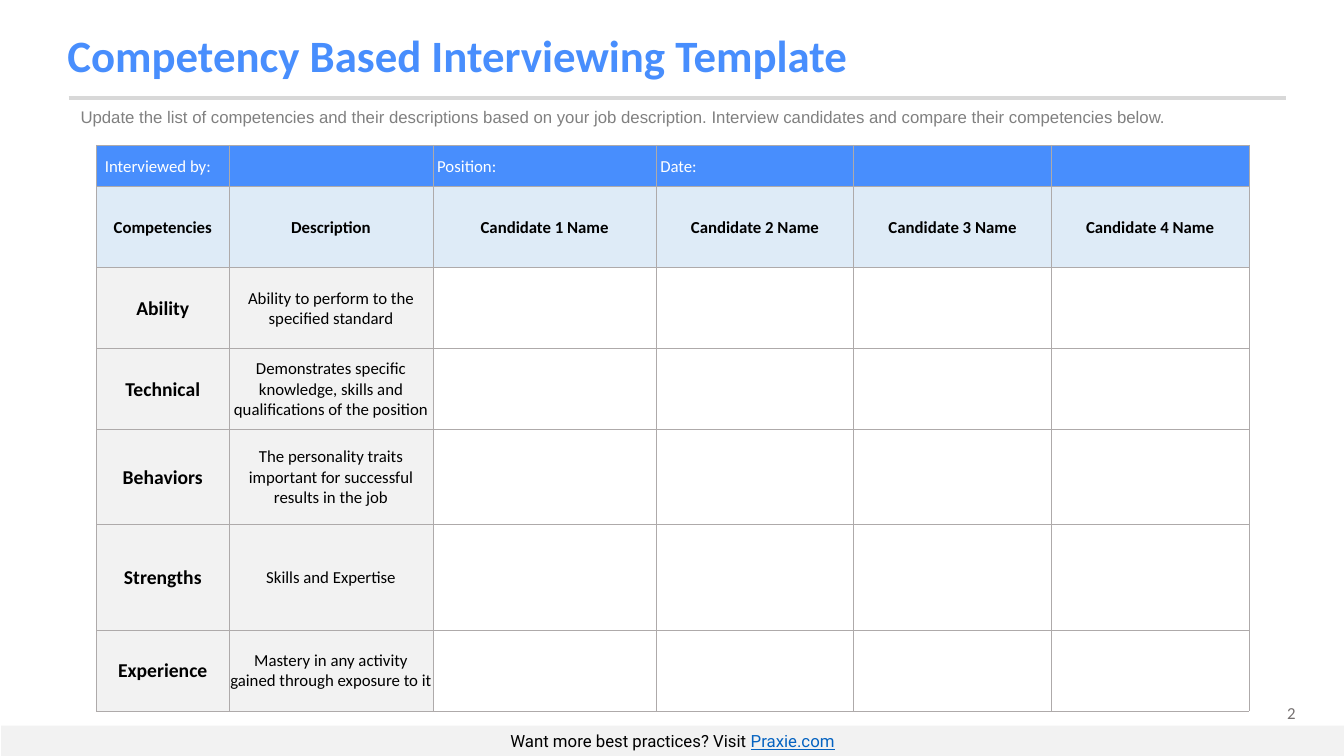
import pptx
import pptx.util
import pptx.dml.color
import pptx.enum.shapes
import pptx.enum.text
import pptx.oxml
import pptx.oxml.ns

COLORS = {
    "blue": "488EFD", "pale blue": "DEEBF7", "pale gray": "F2F2F2",
    "white": "FFFFFF", "black": "000000", "rule": "D8D8D8",
    "border": "AEAAAA", "number": "757070", "hint": "808080", "link": "0563C1",
}
ALIGN = pptx.enum.text.PP_ALIGN
MIDDLE = pptx.enum.text.MSO_ANCHOR.MIDDLE
RGB = pptx.dml.color.RGBColor.from_string

presentation = pptx.Presentation()
presentation.slide_width = pptx.util.Inches(13.33)
presentation.slide_height = pptx.util.Inches(7.5)
slide = presentation.slides.add_slide(presentation.slide_layouts[6])
shapes = slide.shapes


def place(left, top, width, height):
    """Turn percentages of the slide's width and height into lengths."""
    across, down = presentation.slide_width / 100, presentation.slide_height / 100
    return int(left * across), int(top * down), int(width * across), int(height * down)


def write(frame, text, size, color, font="Calibri", bold=False, align=ALIGN.LEFT):
    frame.word_wrap = True
    paragraph = frame.paragraphs[0]
    paragraph.text = text
    paragraph.alignment = align
    run = paragraph.runs[0]
    run.font.name = font
    run.font.size = pptx.util.Pt(size)
    run.font.bold = bold
    run.font.color.rgb = RGB(COLORS[color])
    return paragraph


# Title, rule and hint
title = shapes.add_textbox(*place(4.28, 2.53, 82, 10.27))
title.text_frame.vertical_anchor = MIDDLE
write(title.text_frame, "Competency Based Interviewing Template", 32, "blue",
      bold=True).line_spacing = 0.9

left, top, width, _ = place(5.1, 12.93, 90.62, 0)
rule = shapes.add_connector(pptx.enum.shapes.MSO_CONNECTOR.STRAIGHT,
                            left, top, left + width, top)
rule.line.color.rgb = RGB(COLORS["rule"])
rule.line.width = pptx.util.Pt(3)
rule._element.spPr.append(pptx.oxml.parse_xml(
    f'<a:effectLst {pptx.oxml.ns.nsdecls("a")}/>'))

hint = shapes.add_textbox(*place(5.25, 13.47, 89.5, 4))
write(hint.text_frame,
      "Update the list of competencies and their descriptions based on your job "
      "description. Interview candidates and compare their competencies below.",
      12, "hint", font="Arial")

# Competency table
candidates = [f"Candidate {number} Name" for number in range(1, 5)]
blank = [""] * len(candidates)
rows = [
    ["Interviewed by:", "", "Position:", "Date:", "", ""],
    ["Competencies", "Description"] + candidates,
    ["Ability", "Ability to perform to the specified standard"] + blank,
    ["Technical", "Demonstrates specific knowledge, skills and "
                  "qualifications of the position"] + blank,
    ["Behaviors", "The personality traits important for successful "
                  "results in the job"] + blank,
    ["Strengths", "Skills and Expertise"] + blank,
    ["Experience", "Mastery in any activity gained through exposure to it"] + blank,
]
column_shares = [9.83, 15.2, 16.6, 14.7, 14.7, 14.7]
row_shares = [5.5, 10.72, 10.68, 10.68, 12.6, 13.95, 10.72]

table_frame = shapes.add_table(
    len(rows), len(column_shares),
    *place(7.2, 19.2, sum(column_shares), sum(row_shares)))
table = table_frame.table
table.first_row = table.horz_banding = False
for column, share in zip(table.columns, column_shares):
    column.width = place(0, 0, share, 0)[2]
for row, share in zip(table.rows, row_shares):
    row.height = place(0, 0, 0, share)[3]

for row_index, texts in enumerate(rows):
    for column_index, text in enumerate(texts):
        cell = table.cell(row_index, column_index)
        cell.vertical_anchor = MIDDLE
        size, color, bold, align = 12, "black", False, ALIGN.CENTER
        indent = 0.01
        if row_index == 0:
            fill, color, align = "blue", "white", ALIGN.LEFT
            indent = 0.08 if column_index == 0 else 0.04
        elif row_index == 1:
            fill, bold = "pale blue", True
        elif column_index == 0:
            fill, size, bold = "pale gray", 14, True
        else:
            fill = "pale gray" if column_index == 1 else "white"
        cell.fill.solid()
        cell.fill.fore_color.rgb = RGB(COLORS[fill])
        cell.margin_left = pptx.util.Inches(indent)
        cell.margin_right = cell.margin_top = pptx.util.Inches(0.01)
        cell.margin_bottom = 0
        if text:
            write(cell.text_frame, text, size, color, bold=bold, align=align)
        properties = cell._tc.get_or_add_tcPr()
        for position, side in enumerate("LRTB"):
            properties.insert(position, pptx.oxml.parse_xml(
                f'<a:ln{side} {pptx.oxml.ns.nsdecls("a")} w="6350"><a:solidFill>'
                f'<a:srgbClr val="{COLORS["border"]}"/></a:solidFill></a:ln{side}>'))

# Footer and slide number
footer = shapes.add_shape(pptx.enum.shapes.MSO_SHAPE.RECTANGLE, *place(0.08, 96, 99.92, 4))
footer.shadow.inherit = False
footer.fill.solid()
footer.fill.fore_color.rgb = RGB(COLORS["pale gray"])
footer.line.fill.background()
footer.text_frame.vertical_anchor = MIDDLE
invitation = write(footer.text_frame, "Want more best practices? Visit ", 12, "black",
                   font="Roboto", align=ALIGN.CENTER)
address = invitation.add_run()
address.text = "Praxie.com"
address.font.name = "Roboto"
address.font.size = pptx.util.Pt(12)
address.font.underline = True
address.font.color.rgb = RGB(COLORS["link"])

slide_number = shapes.add_textbox(*place(89.5, 92.27, 7.65, 4))
write(slide_number.text_frame, "2", 12, "number", align=ALIGN.RIGHT)

presentation.save("out.pptx")
